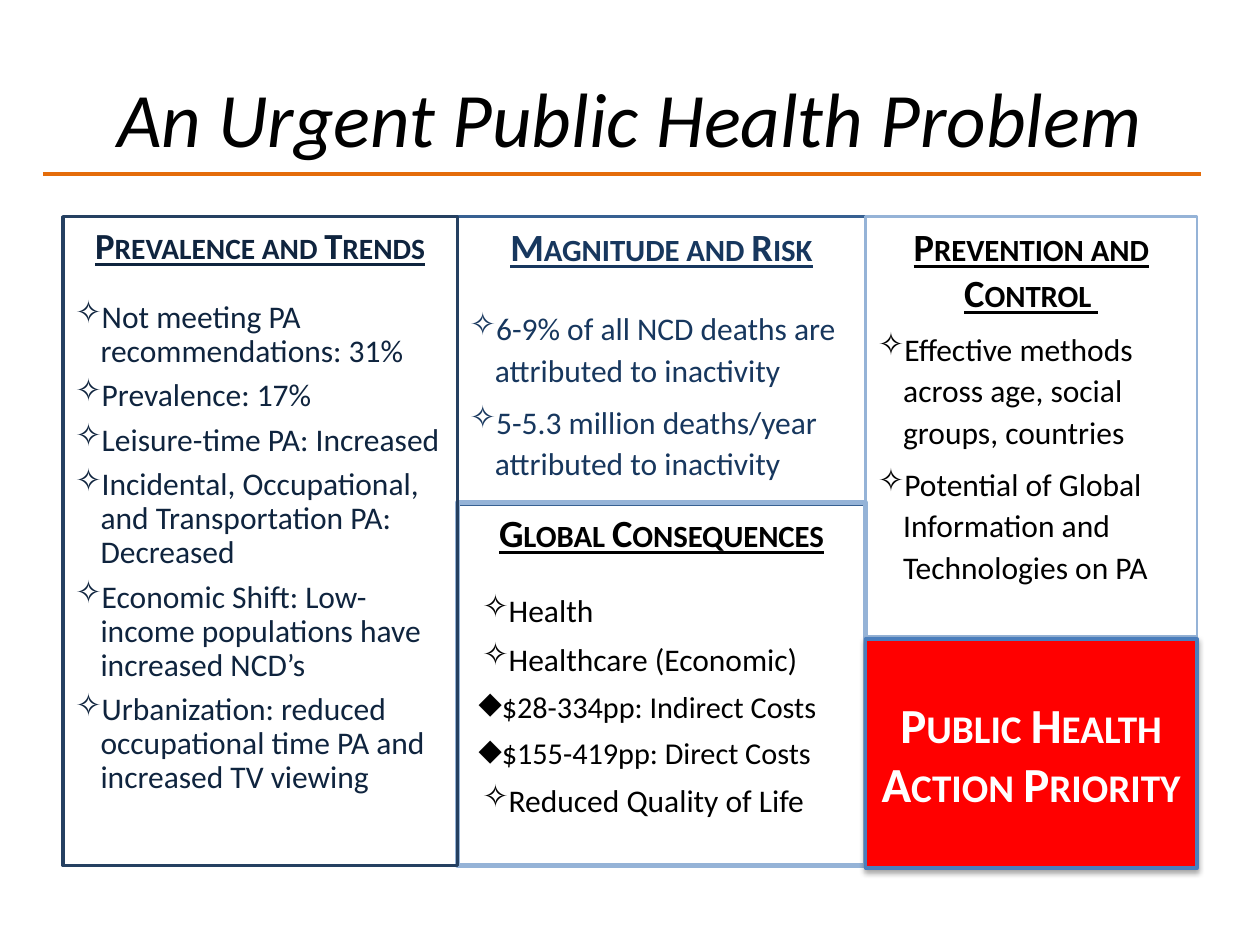
"""Build the slide on physical inactivity as an urgent public health problem."""
from lxml import etree
from pptx import Presentation
from pptx.dml.color import RGBColor
from pptx.enum.shapes import MSO_CONNECTOR, MSO_SHAPE
from pptx.enum.text import MSO_ANCHOR, PP_ALIGN
from pptx.oxml.ns import qn
from pptx.util import Inches, Pt

CENTER, LEFT = PP_ALIGN.CENTER, PP_ALIGN.LEFT
TOP, MIDDLE = MSO_ANCHOR.TOP, MSO_ANCHOR.MIDDLE
RECTANGLE, STRAIGHT = MSO_SHAPE.RECTANGLE, MSO_CONNECTOR.STRAIGHT

THEME = {
    "font": "Calibri", "black": "000000", "white": "FFFFFF", "rule": "E46C0A",
    "navy": "17375E", "ink": "0F243E", "red": "FF0000", "red edge": "4B7EBC",
    "blue edge": "376092", "pale edge": "95B3D7", "dark edge": "254061",
    "title": 44, "heading": 22, "tight heading": 21, "item": 18,
    "cost": 17.3, "action": 28,
}

TITLE = "An Urgent Public Health Problem"
COLUMNS = [0.5, 3.63, 6.87, 9.5]
PANEL_TOP, PANEL_BOTTOM = 1.72, 6.87

ITEM_STYLES = {
    "item": ("✧", 0.2, -0.2),
    "inset": ("✧", 0.3, -0.2),
    "cost": ("◆", 0.25, -0.18),
}

PANELS = [
    {"heading": "Magnitude and Risk", "column": 1, "top": PANEL_TOP, "bottom": 4,
     "edge": "blue edge", "weight": 2, "color": "navy", "size": "heading",
     "spacing": 1.1, "gap": 20.6,
     "items": [("item", "6-9% of all NCD deaths are attributed to inactivity"),
               ("item", "5-5.3 million deaths/year attributed to inactivity")]},
    {"heading": "Prevention and Control ", "column": 2, "top": PANEL_TOP, "bottom": 5.05,
     "edge": "pale edge", "weight": 1.5, "color": "black", "size": "heading",
     "spacing": 1.1, "gap": 6,
     "items": [("item", "Eﬀective methods across age, social groups, countries"),
               ("item", "Potential of Global Information and Technologies on PA")]},
    {"heading": "Global Consequences", "column": 1, "top": 3.99, "bottom": PANEL_BOTTOM,
     "edge": "pale edge", "weight": 3, "color": "black", "size": "heading",
     "spacing": 1.0, "gap": 20.6,
     "items": [("inset", "Health"),
               ("inset", "Healthcare (Economic)"),
               ("cost", "$28-334pp: Indirect Costs"),
               ("cost", "$155-419pp: Direct Costs"),
               ("inset", "Reduced Quality of Life")]},
    {"heading": "Prevalence and Trends", "column": 0, "top": PANEL_TOP, "bottom": PANEL_BOTTOM,
     "edge": "dark edge", "weight": 2, "color": "ink", "size": "tight heading",
     "spacing": 0.9, "gap": 19.3,
     "items": [("item", "Not meeting PA recommendations: 31%"),
               ("item", "Prevalence: 17%"),
               ("item", "Leisure-time PA: Increased"),
               ("item", "Incidental, Occupational, and Transportation PA: Decreased"),
               ("item", "Economic Shift: Low-income populations have increased NCD’s"),
               ("item", "Urbanization: reduced occupational time PA and increased TV viewing")]},
]
ACTION = {"heading": "Public Health Action Priority", "column": 2, "top": 5.07,
          "bottom": 6.89, "edge": "red edge", "weight": 2}


def paint(name):
    return RGBColor.from_string(THEME[name])


def add_span(para, text, size, color, **style):
    span = para.add_run()
    span.text = text
    font = span.font
    font.name, font.size = THEME["font"], Pt(THEME[size])
    font.color.rgb = paint(color)
    for key, value in style.items():
        setattr(font, key, value)
    return span


def add_heading(para, text, size, color, underline):
    para.alignment = CENTER
    span = add_span(para, text, size, color, bold=True, underline=underline)
    span._r.get_or_add_rPr().set("cap", "small")


def add_item(para, kind, text, panel, gap):
    mark, margin, indent = ITEM_STYLES[kind]
    props = para._p.get_or_add_pPr()
    props.set("marL", str(Inches(margin)))
    props.set("indent", str(Inches(indent)))
    etree.SubElement(props, qn("a:buChar")).set("char", mark)
    para.alignment = LEFT
    para.line_spacing, para.space_before = panel["spacing"], Pt(gap)
    add_span(para, text, "cost" if kind == "cost" else "item", panel["color"])


def add_box(page, panel, anchor):
    left, right = COLUMNS[panel["column"]:panel["column"] + 2]
    box = page.shapes.add_shape(
        RECTANGLE, Inches(left), Inches(panel["top"]),
        Inches(right - left), Inches(panel["bottom"] - panel["top"]))
    box.shadow.inherit = False
    box.fill.background()
    box.line.color.rgb, box.line.width = paint(panel["edge"]), Pt(panel["weight"])
    box.text_frame.word_wrap = True
    box.text_frame.vertical_anchor = anchor
    return box


def add_panel(page, panel):
    frame = add_box(page, panel, TOP).text_frame
    add_heading(frame.paragraphs[0], panel["heading"], panel["size"], panel["color"], True)
    for index, (kind, text) in enumerate(panel["items"]):
        add_item(frame.add_paragraph(), kind, text, panel, 6 if index else panel["gap"])


def add_action(page):
    box = add_box(page, ACTION, MIDDLE)
    box.fill.solid()
    box.fill.fore_color.rgb = paint("red")
    effects = box._element.spPr.find(qn("a:effectLst"))
    shadow = etree.SubElement(effects, qn("a:outerShdw"), blurRad=str(Pt(3.1)),
                              dist=str(Pt(1.8)), dir="5400000", rotWithShape="0")
    tone = etree.SubElement(shadow, qn("a:srgbClr"), val=THEME["black"])
    etree.SubElement(tone, qn("a:alpha"), val="35000")
    add_heading(box.text_frame.paragraphs[0], ACTION["heading"], "action", "white", False)


def add_title(page):
    title = page.shapes.title
    title.left, title.top = Inches(0.5), Inches(0.3)
    title.width, title.height = Inches(9), Inches(1.25)
    title.text_frame.vertical_anchor = MIDDLE
    para = title.text_frame.paragraphs[0]
    para.alignment = CENTER
    add_span(para, TITLE, "title", "black", italic=True)


def add_rule(page):
    rule = page.shapes.add_connector(
        STRAIGHT, Inches(0.34), Inches(1.38), Inches(9.53), Inches(1.38))
    rule.line.color.rgb, rule.line.width = paint("rule"), Pt(2)
    etree.SubElement(rule._element.spPr, qn("a:effectLst"))


def main():
    deck = Presentation()
    deck.slide_width, deck.slide_height = Inches(10), Inches(7.5)
    page = deck.slides.add_slide(deck.slide_layouts.get_by_name("Title Only"))
    add_title(page)
    for panel in PANELS:
        add_panel(page, panel)
    add_action(page)
    add_rule(page)
    deck.save("out.pptx")


if __name__ == "__main__":
    main()
